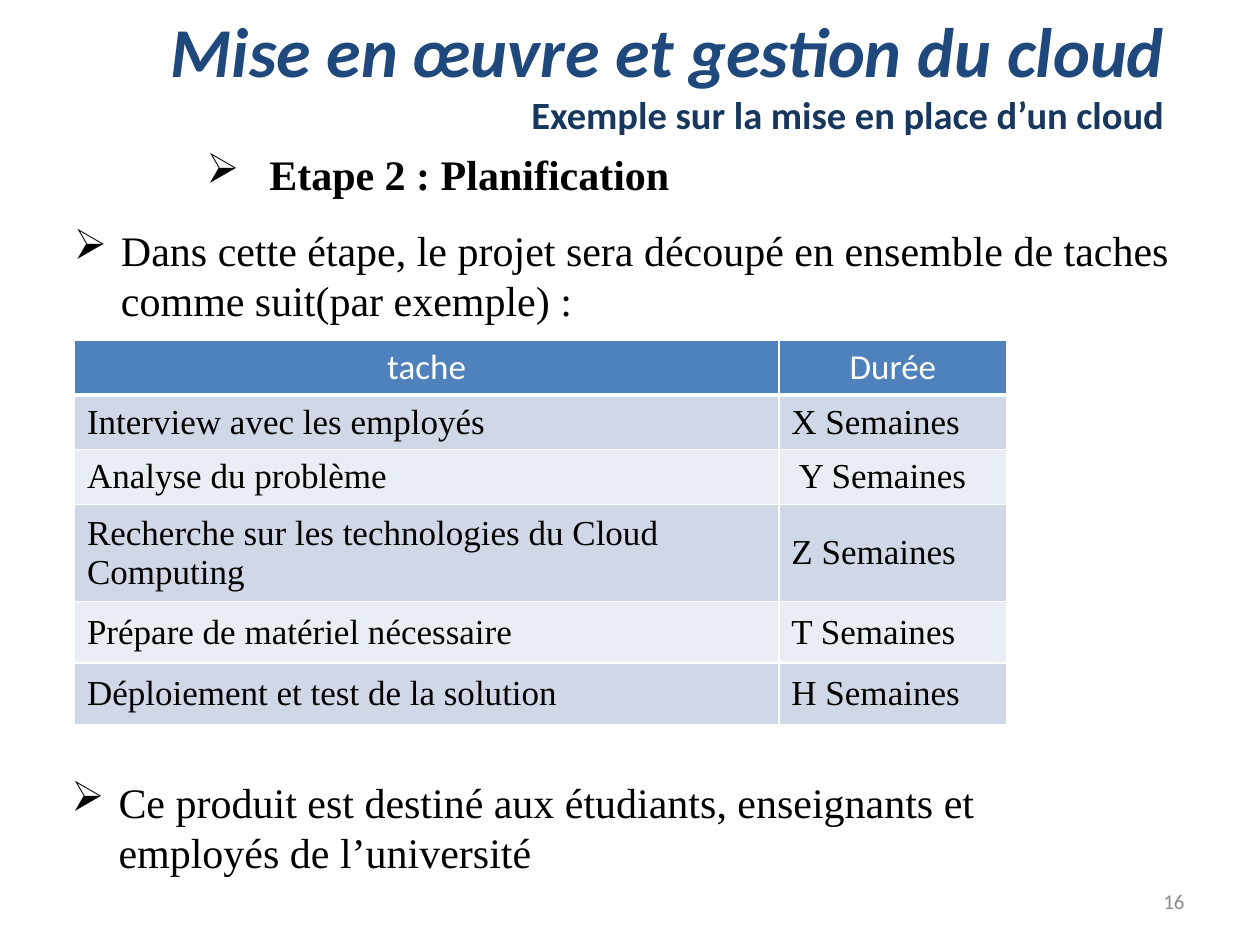
from lxml.etree import SubElement
from pptx import Presentation
from pptx.dml.color import RGBColor
from pptx.enum.text import MSO_ANCHOR as Anchor, PP_ALIGN as Align
from pptx.oxml.ns import qn
from pptx.util import Cm, Pt

TITLE_BLUE = RGBColor(0x1F, 0x49, 0x7D)
SUBTITLE_BLUE = RGBColor(0x17, 0x37, 0x5E)
HEADER_BLUE = RGBColor(0x4F, 0x81, 0xBD)
BAND_DARK = RGBColor(0xD0, 0xD8, 0xE8)
BAND_LIGHT = RGBColor(0xE9, 0xED, 0xF4)
GREY = RGBColor(0x8C, 0x8C, 0x8C)
BLACK = RGBColor(0, 0, 0)
WHITE = RGBColor(0xFF, 0xFF, 0xFF)
SERIF, SANS = "Times New Roman", "Calibri"


def add_run(paragraph, text, font_name, size, color, bold=False, italic=False):
    run = paragraph.add_run()
    run.text = text
    font = run.font
    font.name, font.size, font.bold, font.italic = font_name, Pt(size), bold, italic
    font.color.rgb = color


def add_border(cell, side, width):
    """Draw one white edge; side is L, R, T or B."""
    line = SubElement(cell._tc.get_or_add_tcPr(), qn(f"a:ln{side}"), w=str(Pt(width)))
    fill = SubElement(line, qn("a:solidFill"))
    SubElement(fill, qn("a:srgbClr"), val=str(WHITE))


presentation = Presentation()
presentation.slide_width, presentation.slide_height = Cm(25.4), Cm(19.05)
slide = presentation.slides.add_slide(presentation.slide_layouts[5])

# Title
title = slide.shapes.title
title.left, title.top, title.width, title.height = Cm(0.86), Cm(-0.13), Cm(22.86), Cm(3.18)
title.text_frame.vertical_anchor = Anchor.MIDDLE
paragraph = title.text_frame.paragraphs[0]
paragraph.alignment = Align.RIGHT
add_run(paragraph, "Mise en œuvre et gestion du cloud", SANS, 40, TITLE_BLUE, True, True)
paragraph.add_line_break()
add_run(paragraph, "Exemple sur la mise en place d’un cloud", SANS, 22, SUBTITLE_BLUE, True)

# Bulleted texts: left, top, width, height, indent, bold, text
bullets = [
    (3.91, 2.87, 16.41, 1.27, 1.27, True, "Etape 2\u00a0: Planification"),
    (1.24, 4.4, 23.72, 2.3, 0.95, False,
     "Dans cette étape, le projet sera découpé en ensemble de taches comme suit(par exemple) :"),
    (1.19, 15.52, 21.31, 2.3, 0.95, False,
     "Ce produit est destiné aux étudiants, enseignants et employés de l’université"),
]
for left, top, width, height, indent, bold, text in bullets:
    box = slide.shapes.add_textbox(Cm(left), Cm(top), Cm(width), Cm(height))
    box.text_frame.word_wrap = True
    paragraph = box.text_frame.paragraphs[0]
    properties = paragraph._p.get_or_add_pPr()
    properties.set("marL", str(Cm(indent)))
    properties.set("indent", str(-Cm(indent)))
    SubElement(properties, qn("a:buChar"), char="➢")
    add_run(paragraph, text, SERIF, 24, BLACK, bold)

# Task table
tasks = [
    ("tache", "Durée"),
    ("Interview avec les employés", "X Semaines"),
    ("Analyse du problème", " Y Semaines"),
    ("Recherche sur les technologies du Cloud Computing", "Z Semaines"),
    ("Prépare de matériel nécessaire", "T Semaines"),
    ("Déploiement et test de la solution", "H Semaines"),
]
row_heights = [1.09, 1.09, 1.09, 1.96, 1.24, 1.24]
table = slide.shapes.add_table(
    len(tasks), 2, Cm(1.5), Cm(6.86), Cm(18.8), Cm(sum(row_heights))).table
table.columns[0].width, table.columns[1].width = Cm(14.2), Cm(4.6)
for row_index, (task, height) in enumerate(zip(tasks, row_heights)):
    table.rows[row_index].height = Cm(height)
    header = row_index == 0
    for column_index, text in enumerate(task):
        cell = table.cell(row_index, column_index)
        for side in "LRTB":
            add_border(cell, side, 3 if header and side == "B" else 1)
        cell.fill.solid()
        paragraph = cell.text_frame.paragraphs[0]
        if header:
            cell.fill.fore_color.rgb = HEADER_BLUE
            paragraph.alignment = Align.CENTER
            add_run(paragraph, text, SANS, 20, WHITE)
        else:
            cell.fill.fore_color.rgb = BAND_DARK if row_index % 2 else BAND_LIGHT
            cell.vertical_anchor = Anchor.MIDDLE
            add_run(paragraph, text, SERIF, 20, BLACK)

# Page number
page_number = slide.shapes.add_textbox(Cm(18.21), Cm(17.65), Cm(5.92), Cm(1.02))
page_number.text_frame.word_wrap = True
page_number.text_frame.vertical_anchor = Anchor.MIDDLE
paragraph = page_number.text_frame.paragraphs[0]
paragraph.alignment = Align.RIGHT
add_run(paragraph, "16", SANS, 12, GREY)

presentation.save("out.pptx")
